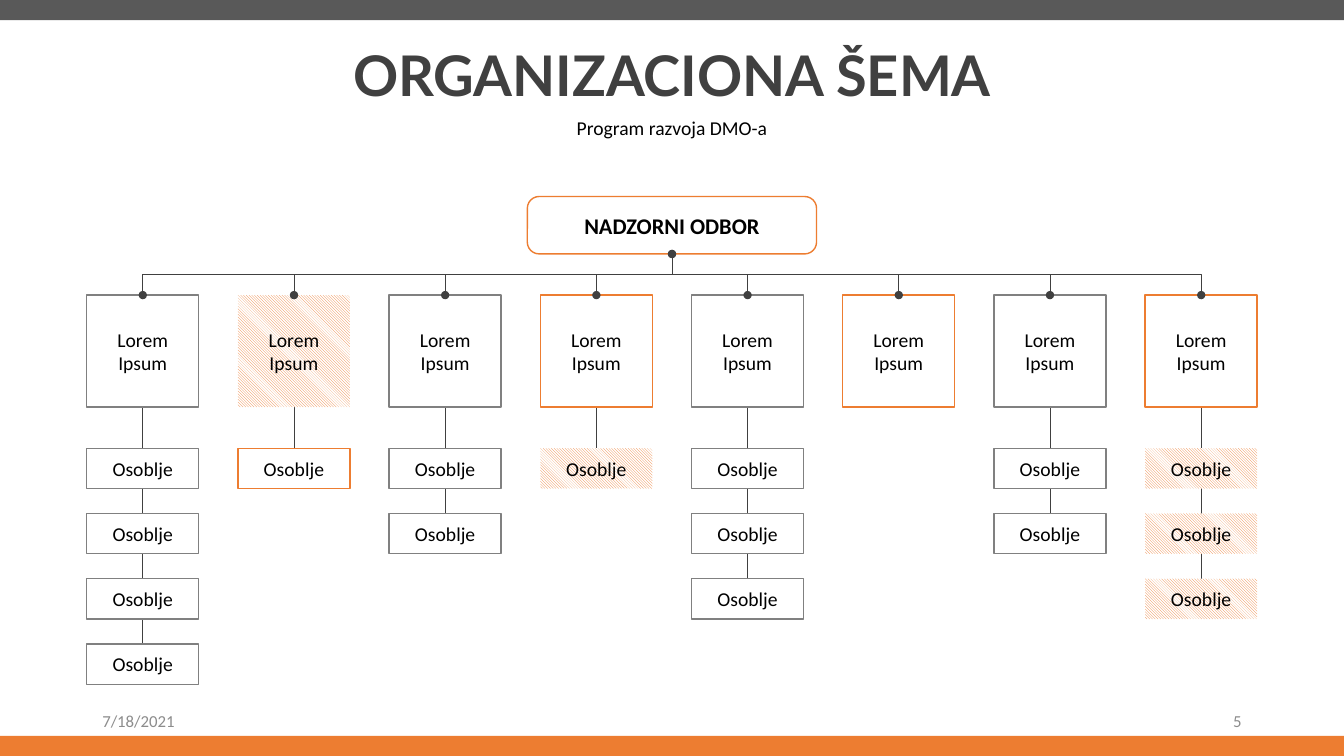
import pptx
import pptx.dml.color
import pptx.enum.dml
import pptx.enum.shapes
import pptx.enum.text
import pptx.oxml
import pptx.oxml.ns
import pptx.util

Pt = pptx.util.Pt
SHAPES = pptx.enum.shapes.MSO_SHAPE
CONNECTORS = pptx.enum.shapes.MSO_CONNECTOR
ALIGN = pptx.enum.text.PP_ALIGN
ANCHOR = pptx.enum.text.MSO_ANCHOR

COLORS = {"orange": "ED7D31", "band": "595959", "dark": "404040", "gray": "808080",
          "footer": "8C8C8C", "white": "FFFFFF", "black": "000000"}
WIDTH, HEIGHT = 960, 540
COLUMN_LEFT, COLUMN_PITCH, BOX_SIZE = 62, 108, 80
STAFF_HEIGHT, STAFF_PITCH, STAFF_GAP = 28.8, 46.6, 29.4
DEPARTMENTS = [("gray", "gray", 4), ("pattern", "orange", 1), ("gray", "gray", 2),
               ("orange", "pattern", 1), ("gray", "gray", 3), ("orange", None, 0),
               ("gray", "gray", 2), ("orange", "pattern", 3)]


def color(name):
    """Return the named colour."""
    return pptx.dml.color.RGBColor.from_string(COLORS[name])


def write(shape, text, size, font="Calibri", ink="black", bold=False, align=ALIGN.CENTER,
          frame_format=None, spacing=None):
    """Put one formatted paragraph into a shape."""
    frame = shape.text_frame
    settings = {"word_wrap": True, "vertical_anchor": ANCHOR.MIDDLE, **(frame_format or {})}
    for name, value in settings.items():
        setattr(frame, name, value)
    paragraph = frame.paragraphs[0]
    paragraph.alignment = align
    paragraph.line_spacing = spacing
    run = paragraph.add_run()
    run.text = text
    for name, value in {"name": font, "size": Pt(size), "bold": bold}.items():
        setattr(run.font, name, value)
    run.font.color.rgb = color(ink)


def add_box(slide, box, style, kind=SHAPES.RECTANGLE):
    """Add a white box with a coloured outline, or a hatched box without one."""
    shape = slide.shapes.add_shape(kind, *map(Pt, box))
    shape.shadow.inherit = False
    if style == "pattern":
        shape.fill.patterned()
        shape.fill.pattern = pptx.enum.dml.MSO_PATTERN.LIGHT_DOWNWARD_DIAGONAL
        shape.fill.fore_color.rgb = color("orange")
        shape.fill.back_color.rgb = color("white")
        shape.line.fill.background()
    else:
        shape.fill.solid()
        shape.fill.fore_color.rgb = color("white")
        shape.line.color.rgb = color(style)
        shape.line.width = Pt(1)
    return shape


def add_line(slide, start, end, ovals=(), kind=CONNECTORS.STRAIGHT):
    """Add a thin connector with round dots on the given ends."""
    connector = slide.shapes.add_connector(kind, *map(Pt, (*start, *end)))
    connector.line.color.rgb = color("dark")
    connector.line.width = Pt(0.5)
    line = connector.line._get_or_add_ln()
    for end_name in ovals:
        line.append(pptx.oxml.parse_xml(
            f'<a:{end_name} {pptx.oxml.ns.nsdecls("a")} type="oval"/>'))
    connector._element.spPr.append(
        pptx.oxml.parse_xml(f'<a:effectLst {pptx.oxml.ns.nsdecls("a")}/>'))
    return connector


def add_bands(slide, thickness):
    """Add the coloured bands along the bottom and top edges."""
    for top, name in ((HEIGHT - thickness, "orange"), (0, "band")):
        band = slide.shapes.add_shape(SHAPES.RECTANGLE, *map(Pt, (0, top, WIDTH, thickness)))
        band.shadow.inherit = False
        band.fill.solid()
        band.fill.fore_color.rgb = color(name)
        band.line.fill.background()


def add_heading(slide, left, top, width):
    """Add the centred title and subtitle."""
    tight = {"margin_left": 0, "margin_top": 0, "margin_right": 0, "margin_bottom": 0,
             "vertical_anchor": ANCHOR.TOP,
             "auto_size": pptx.enum.text.MSO_AUTO_SIZE.SHAPE_TO_FIT_TEXT}
    title = slide.shapes.add_textbox(*map(Pt, (left, top, width, 44)))
    write(title, "ORGANIZACIONA ŠEMA", 40, "Lato", "dark", True, frame_format=tight, spacing=0.9)
    subtitle = slide.shapes.add_textbox(*map(Pt, (left, top + 48.3, width, 17)))
    write(subtitle, "Program razvoja DMO-a", 14, frame_format=tight)


def add_footer(slide, left, top, width):
    """Add the date on the left and the slide number on the right."""
    field = 216
    for text, offset, align in (("7/18/2021", 0, ALIGN.LEFT), ("5", width - field, ALIGN.RIGHT)):
        box = slide.shapes.add_textbox(*map(Pt, (left + offset, top, field, 28.8)))
        write(box, text, 12, ink="footer", align=align)


def add_column(slide, left, top, style, staff_style, count):
    """Add a department with its staff below and return the department box."""
    center, bottom = left + BOX_SIZE / 2, top + BOX_SIZE
    staff_tops = [bottom + STAFF_GAP + STAFF_PITCH * row for row in range(count)]
    trunk = add_line(slide, (center, bottom), (center, staff_tops[-1])) if count else None
    department = add_box(slide, (left, top, BOX_SIZE, BOX_SIZE), style)
    write(department, "Lorem Ipsum", 14)
    for staff_top in staff_tops:
        staff = add_box(slide, (left, staff_top, BOX_SIZE, STAFF_HEIGHT), staff_style)
        write(staff, "Osoblje", 14)
    if trunk is not None:
        trunk.begin_connect(department, 2)
        trunk.end_connect(staff, 0)
    return department


def add_elbow(slide, board, department, start, end):
    """Join the board to an outer department with a vertical elbow."""
    elbow = add_line(slide, start, end, ("headEnd", "tailEnd"), CONNECTORS.ELBOW)
    elbow.begin_connect(board, 2)
    elbow.end_connect(department, 0)
    drop, span = end[1] - start[1], abs(end[0] - start[0])
    place = {"left": (start[0] + end[0] - drop) / 2, "top": (start[1] + end[1] - span) / 2,
             "width": drop, "height": span}
    for name, value in place.items():
        setattr(elbow, name, Pt(value))
    to_right = end[0] > start[0]
    transform = elbow._element.spPr.xfrm
    transform.set("rot", str((270 if to_right else 90) * 60000))
    transform.set("flipH", "1" if to_right else "0")


def add_chart_of_departments(slide, left, board_top, column_top):
    """Add the board, the department columns and the lines between them."""
    lefts = [left + COLUMN_PITCH * index for index in range(len(DEPARTMENTS))]
    departments = [add_column(slide, column_left, column_top, *details)
                   for column_left, details in zip(lefts, DEPARTMENTS)]
    centers = [column_left + BOX_SIZE / 2 for column_left in lefts]
    middle = (centers[0] + centers[-1]) / 2
    board_width, board_height = 206.6, 41
    board = add_box(slide, (middle - board_width / 2, board_top, board_width, board_height),
                    "orange", SHAPES.ROUNDED_RECTANGLE)
    board.adjustments[0] = 0.206
    write(board, "NADZORNI ODBOR", 16, bold=True)
    board_bottom = board_top + board_height
    for index in (0, -1):
        add_elbow(slide, board, departments[index], (middle, board_bottom),
                  (centers[index], column_top))
    rail = (board_bottom + column_top) / 2
    for center, department in zip(centers[1:-1], departments[1:-1]):
        branch = add_line(slide, (center, rail), (center, column_top), ("tailEnd",))
        branch.end_connect(department, 0)


def main():
    """Build and save the presentation."""
    presentation = pptx.Presentation()
    presentation.slide_width, presentation.slide_height = Pt(WIDTH), Pt(HEIGHT)
    slide = presentation.slides.add_slide(presentation.slide_layouts[6])
    add_bands(slide, 14.4)
    add_heading(slide, 29, 34.5, 902)
    add_footer(slide, 66, 500.6, 828)
    add_chart_of_departments(slide, COLUMN_LEFT, 140.4, 210.8)
    presentation.save("out.pptx")


if __name__ == "__main__":
    main()
